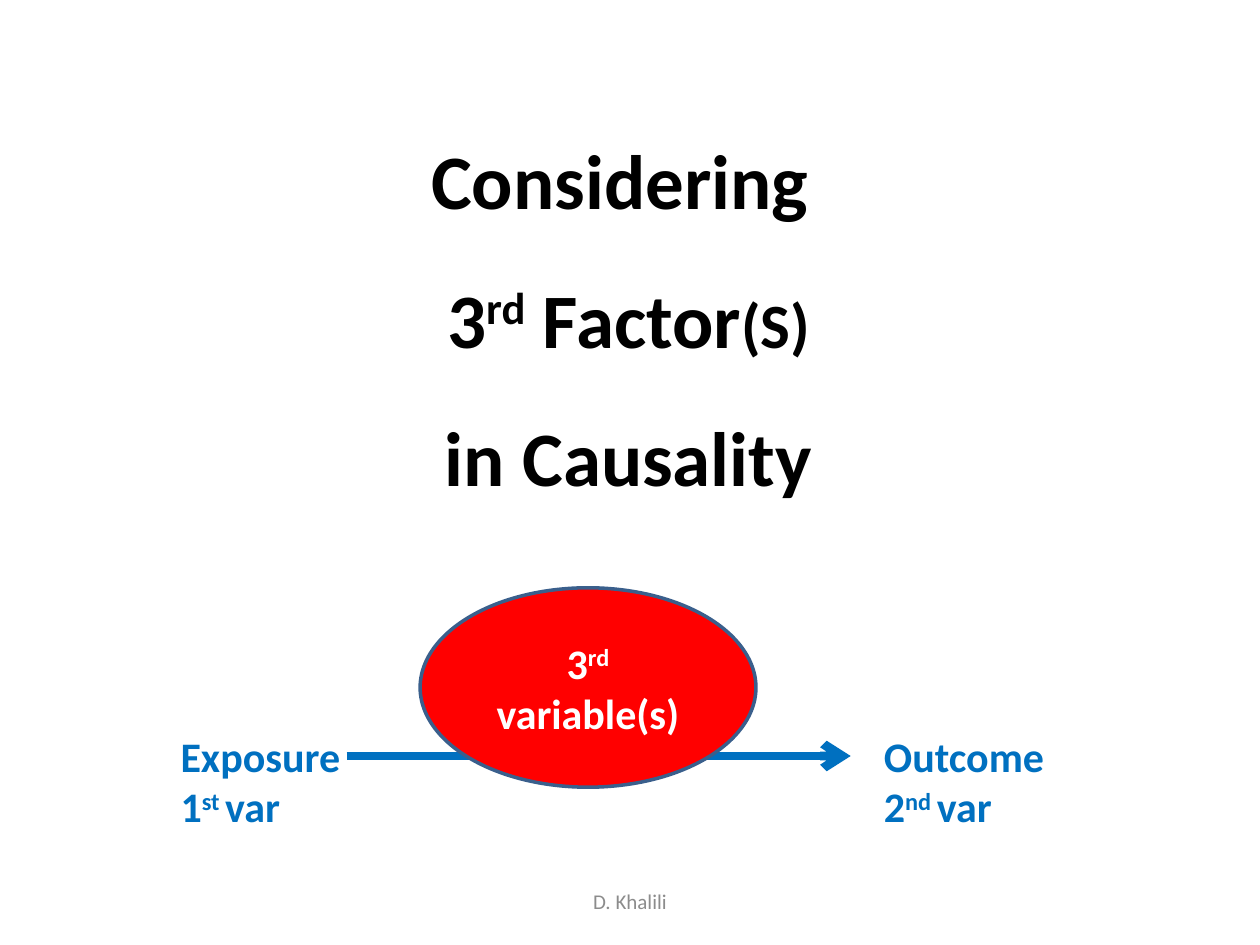
from lxml import etree
from pptx import Presentation
from pptx import util as u
from pptx.dml.color import RGBColor
from pptx.enum import shapes, text
from pptx.oxml import ns

FONT = "Calibri"
COLOURS = {
    "title": "000000",
    "footer": "8C8C8C",
    "variable": "0070C0",
    "third": "FF0000",
    "third_line": "3A5F8C",
    "third_text": "FFFFFF",
}


def colour(name):
    return RGBColor.from_string(COLOURS[name])


def fill_paragraph(paragraph, marked_text, size, colour_name, bold=True):
    """Write text whose ^marked^ parts are superscript and whose \\v is a line break."""
    for line_number, line in enumerate(marked_text.split("\v")):
        if line_number:
            paragraph.add_line_break()
        for part_number, part in enumerate(line.split("^")):
            if not part:
                continue
            run = paragraph.add_run()
            run.text = part
            run.font.name = FONT
            run.font.size = u.Pt(size)
            run.font.bold = bold
            run.font.color.rgb = colour(colour_name)
            if part_number % 2:
                run.font._element.set("baseline", "30000")


def add_text(slide, box, lines, size, colour_name, bold=True,
             align=text.PP_ALIGN.LEFT, anchor=text.MSO_ANCHOR.TOP):
    shape = slide.shapes.add_textbox(*map(u.Cm, box))
    frame = shape.text_frame
    frame.word_wrap = True
    frame.vertical_anchor = anchor
    for number, line in enumerate(lines):
        paragraph = frame.add_paragraph() if number else frame.paragraphs[0]
        paragraph.alignment = align
        fill_paragraph(paragraph, line, size, colour_name, bold)
    return shape


def add_title(slide):
    shape = add_text(slide, (1.07, 1.27, 22.86, 9.32),
                     ["Considering\v 3^rd^ Factor^^(S)\v in Causality"], 44, "title",
                     align=text.PP_ALIGN.CENTER, anchor=text.MSO_ANCHOR.MIDDLE)
    paragraph = shape.text_frame.paragraphs[0]
    paragraph.line_spacing = 1.5
    for run in paragraph.runs:
        if run.text == "(S)":
            run.font.size = u.Pt(36)


def add_arrow(slide, left, right, y):
    connector = slide.shapes.add_connector(
        shapes.MSO_CONNECTOR.STRAIGHT, u.Cm(left), u.Cm(y), u.Cm(right), u.Cm(y))
    connector.line.color.rgb = colour("variable")
    connector.line.width = u.Pt(5)
    line = connector.line._get_or_add_ln()
    etree.SubElement(line, ns.qn("a:tailEnd"), type="arrow")
    etree.SubElement(connector._element.spPr, ns.qn("a:effectLst"))


def add_ellipse(slide, box, label):
    shape = slide.shapes.add_shape(shapes.MSO_SHAPE.OVAL, *map(u.Cm, box))
    shape.shadow.inherit = False
    shape.fill.solid()
    shape.fill.fore_color.rgb = colour("third")
    shape.line.color.rgb = colour("third_line")
    shape.line.width = u.Pt(2)
    frame = shape.text_frame
    frame.word_wrap = True
    frame.vertical_anchor = text.MSO_ANCHOR.MIDDLE
    paragraph = frame.paragraphs[0]
    paragraph.alignment = text.PP_ALIGN.CENTER
    fill_paragraph(paragraph, label, 24, "third_text")


def main():
    presentation = Presentation()
    presentation.slide_width = u.Cm(25.4)
    presentation.slide_height = u.Cm(19.05)
    slide = presentation.slides.add_slide(presentation.slide_layouts[6])

    add_title(slide)
    add_text(slide, (8.68, 17.66, 8.04, 1.01), ["D. Khalili"], 12, "footer", bold=False,
             align=text.PP_ALIGN.CENTER, anchor=text.MSO_ANCHOR.MIDDLE)

    variables = [
        (3.39, 4.02, ["Exposure", "1^st ^var"]),
        (17.57, 3.81, ["Outcome", "2^nd ^var"]),
    ]
    for left, width, lines in variables:
        add_text(slide, (left, 14.6, width, 2.31), lines, 24, "variable")

    add_arrow(slide, 6.99, 17.15, 15.24)
    add_ellipse(slide, (8.47, 11.85, 6.77, 4.02), "3^rd^ variable(s)")
    presentation.save("out.pptx")


if __name__ == "__main__":
    main()
